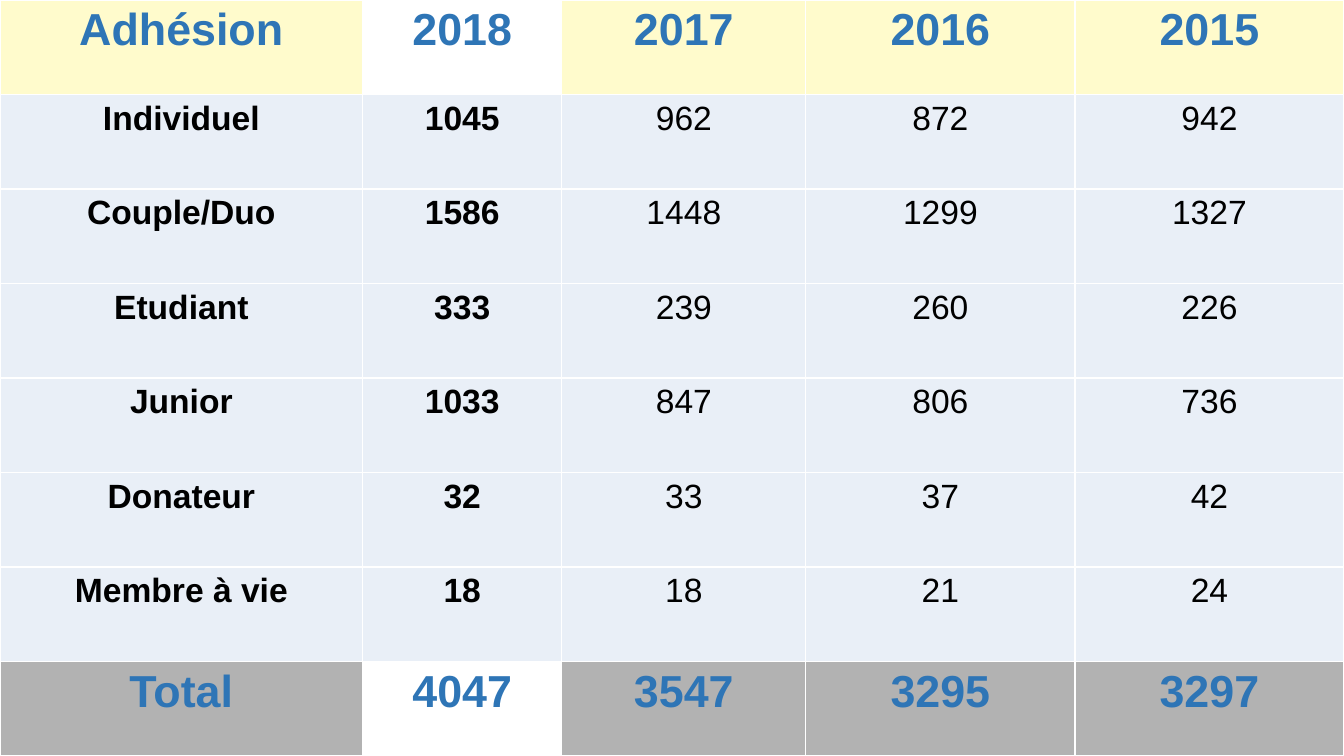
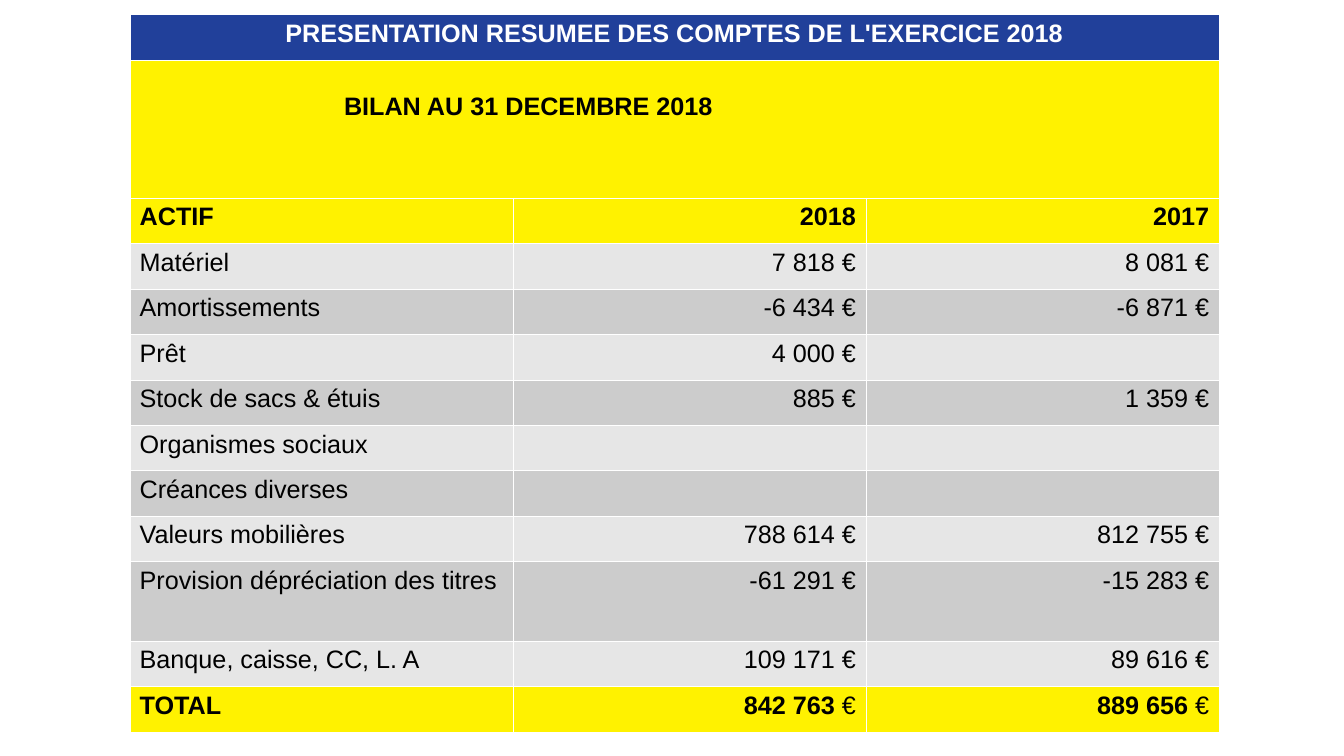
"""Build two slides: membership figures by year and a balance sheet of assets."""
from dataclasses import dataclass
from itertools import cycle
from typing import Optional

import lxml.etree
import pptx
import pptx.dml.color
import pptx.enum.text
import pptx.oxml.ns
import pptx.slide
import pptx.table
import pptx.util

Cm = pptx.util.Cm
Align = pptx.enum.text.PP_ALIGN


@dataclass(frozen=True)
class Theme:
    font: str = "Arial"
    white: str = "FFFFFF"
    black: str = "000000"
    heading_blue: str = "2E75B6"
    cream: str = "FFFBCC"
    pale_blue: str = "E9EFF7"
    total_grey: str = "B2B2B2"
    banner_blue: str = "21409A"
    yellow: str = "FFF200"
    light_grey: str = "E6E6E6"
    mid_grey: str = "CCCCCC"
    large: int = 32
    medium: int = 24
    small: int = 18


THEME = Theme()


@dataclass(frozen=True)
class Entry:
    text: str
    fill: str
    size: int
    color: str = THEME.black
    bold: bool = False
    align: Align = Align.CENTER
    unit: str = ""


@dataclass(frozen=True)
class Margins:
    left: float
    top: float
    right: float
    bottom: float = 0.13


@dataclass(frozen=True)
class Grid:
    left: float
    top: float
    columns: list[float]
    rows: list[float]
    margins: Margins
    border: float


MEMBERSHIP = Grid(0, 0, [9.14, 5.02, 6.15, 6.78, 6.78], [19.05 / 8] * 8,
                  Margins(0.1, 0.13, 0.1), 0.96)
BALANCE_HEIGHT, BANNER_HEIGHT, PROVISION_HEIGHT = 18.08, 3.48, 2.0
LINE_HEIGHT = (BALANCE_HEIGHT - BANNER_HEIGHT - PROVISION_HEIGHT) / 11
BALANCE = Grid(3.27, 0.36, [9.65, 8.9, 8.9],
               [LINE_HEIGHT, BANNER_HEIGHT] + [LINE_HEIGHT] * 8
               + [PROVISION_HEIGHT] + [LINE_HEIGHT] * 2,
               Margins(0.25, 0.13, 0.25), 0.06)
BILAN_MARGINS = Margins(5.4, 0.84, 0.25)

YEARS = ["2018", "2017", "2016", "2015"]
MEMBERS = {
    "Individuel": [1045, 962, 872, 942],
    "Couple/Duo": [1586, 1448, 1299, 1327],
    "Etudiant": [333, 239, 260, 226],
    "Junior": [1033, 847, 806, 736],
    "Donateur": [32, 33, 37, 42],
    "Membre à vie": [18, 18, 21, 24],
}
MEMBER_TOTALS = ["4047", "3547", "3295", "3297"]

ASSETS: dict[str, tuple[Optional[int], Optional[int]]] = {
    "Matériel": (7818, 8081),
    "Amortissements": (-6434, -6871),
    "Prêt": (4000, None),
    "Stock de sacs & étuis": (885, 1359),
    "Organismes sociaux": (None, None),
    "Créances diverses": (None, None),
    "Valeurs mobilières": (788614, 812755),
    "Provision dépréciation des titres": (-61291, -15283),
    "Banque, caisse, CC, L. A": (109171, 89616),
}
ASSET_TOTALS = (842763, 889656)


def set_margins(cell: pptx.table._Cell, margins: Margins) -> None:
    cell.margin_left, cell.margin_right = Cm(margins.left), Cm(margins.right)
    cell.margin_top, cell.margin_bottom = Cm(margins.top), Cm(margins.bottom)


def set_borders(cell: pptx.table._Cell, width: float) -> None:
    qn = pptx.oxml.ns.qn
    properties = cell._tc.get_or_add_tcPr()
    for position, side in enumerate(("a:lnL", "a:lnR", "a:lnT", "a:lnB")):
        line = lxml.etree.Element(qn(side), w=str(int(pptx.util.Pt(width))))
        solid = lxml.etree.SubElement(line, qn("a:solidFill"))
        lxml.etree.SubElement(solid, qn("a:srgbClr"), val=THEME.white)
        properties.insert(position, line)


def fill_cell(cell: pptx.table._Cell, entry: Entry, grid: Grid) -> None:
    cell.fill.solid()
    cell.fill.fore_color.rgb = pptx.dml.color.RGBColor.from_string(entry.fill)
    set_margins(cell, grid.margins)
    set_borders(cell, grid.border)
    paragraph = cell.text_frame.paragraphs[0]
    paragraph.alignment = entry.align
    font = paragraph.font
    font.name, font.size, font.bold = THEME.font, pptx.util.Pt(entry.size), entry.bold
    font.color.rgb = pptx.dml.color.RGBColor.from_string(entry.color)
    if entry.text:
        paragraph.add_run().text = entry.text
    if entry.unit:
        unit = paragraph.add_run()
        unit.text = entry.unit
        unit.font.bold = False


def draw_table(slide: pptx.slide.Slide, grid: Grid,
               lines: list[list[Entry]]) -> pptx.table.Table:
    table = slide.shapes.add_table(
        len(grid.rows), len(grid.columns), Cm(grid.left), Cm(grid.top),
        Cm(sum(grid.columns)), Cm(sum(grid.rows))).table
    table.first_row = table.horz_banding = False
    for column, width in zip(table.columns, grid.columns):
        column.width = Cm(width)
    for row, height, line in zip(table.rows, grid.rows, lines):
        row.height = Cm(height)
        if len(line) == 1:
            row.cells[0].merge(row.cells[len(grid.columns) - 1])
        for cell, entry in zip(row.cells, line):
            fill_cell(cell, entry, grid)
    return table


def highlight_line(texts: list[str], fill: str) -> list[Entry]:
    return [Entry(text, THEME.white if column == 1 else fill, THEME.large,
                  THEME.heading_blue, bold=True)
            for column, text in enumerate(texts)]


def member_line(category: str, counts: list[int]) -> list[Entry]:
    return [Entry(str(value), THEME.pale_blue, THEME.medium, bold=column < 2)
            for column, value in enumerate([category, *counts])]


def amount(value: Optional[int]) -> str:
    return "" if value is None else f"{value:,}".replace(",", " ")


def account_line(texts: list[str], fill: str, bold: bool = False,
                 unit: str = "") -> list[Entry]:
    return [Entry(text, fill, THEME.small, bold=bold,
                  align=Align.RIGHT if column else Align.LEFT,
                  unit=unit if column and text else "")
            for column, text in enumerate(texts)]


def draw_membership(slide: pptx.slide.Slide) -> None:
    draw_table(slide, MEMBERSHIP, [
        highlight_line(["Adhésion", *YEARS], THEME.cream),
        *(member_line(category, counts) for category, counts in MEMBERS.items()),
        highlight_line(["Total", *MEMBER_TOTALS], THEME.total_grey),
    ])


def draw_balance(slide: pptx.slide.Slide) -> None:
    bands = cycle([THEME.light_grey, THEME.mid_grey])
    table = draw_table(slide, BALANCE, [
        [Entry("PRESENTATION RESUMEE DES COMPTES DE L'EXERCICE 2018",
               THEME.banner_blue, THEME.small, THEME.white, bold=True)],
        [Entry("BILAN AU 31 DECEMBRE 2018", THEME.yellow, THEME.small,
               bold=True, align=Align.LEFT)],
        account_line(["ACTIF", *YEARS[:2]], THEME.yellow, bold=True),
        *(account_line([asset, *map(amount, values)], band, unit=" €")
          for (asset, values), band in zip(ASSETS.items(), bands)),
        account_line(["TOTAL", *map(amount, ASSET_TOTALS)], THEME.yellow,
                     bold=True, unit=" €"),
    ])
    set_margins(table.cell(1, 0), BILAN_MARGINS)


def main() -> None:
    deck = pptx.Presentation()
    deck.slide_width, deck.slide_height = Cm(33.87), Cm(19.05)
    for draw in (draw_membership, draw_balance):
        draw(deck.slides.add_slide(deck.slide_layouts[6]))
    deck.save("out.pptx")


if __name__ == "__main__":
    main()
